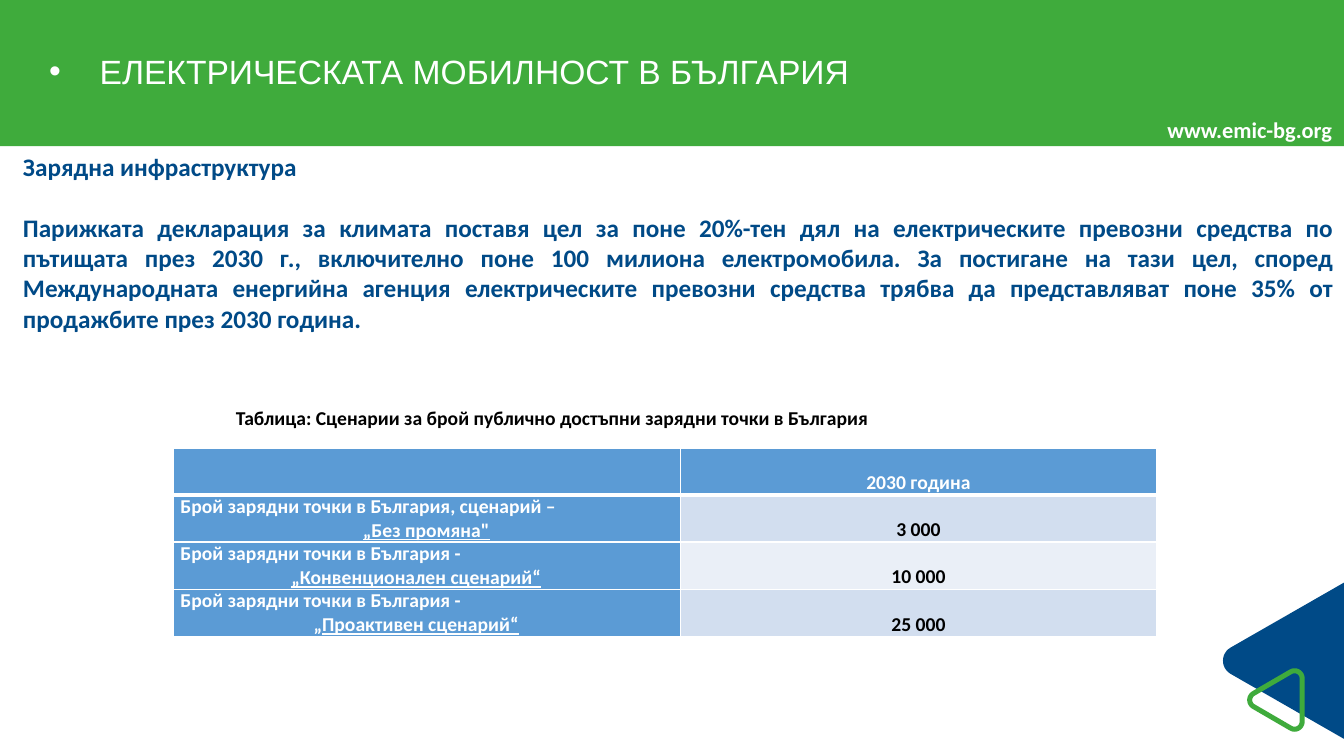
from math import cos, radians, sin

from lxml import etree
from pptx import Presentation
from pptx.dml.color import RGBColor
from pptx.enum.shapes import MSO_SHAPE
from pptx.enum.text import MSO_ANCHOR, PP_ALIGN
from pptx.oxml.ns import qn
from pptx.util import Pt

PX = 9144  # one hundredth of an inch
RECT = MSO_SHAPE.RECTANGLE
MIDDLE, BOTTOM = MSO_ANCHOR.MIDDLE, MSO_ANCHOR.BOTTOM
CENTER, JUSTIFY = PP_ALIGN.CENTER, PP_ALIGN.JUSTIFY
THEME = {
    "green": "3FAB3C", "navy": "004A87", "white": "FFFFFF", "black": "000000",
    "head": "5B9BD5", "bands": ("D2DEEF", "EAEFF7"),
    "title": 24, "body": 18, "link": 16, "small": 14,
}


def style(font, size, color, bold=True, name="Calibri"):
    font.name, font.size, font.bold = name, Pt(size), bold
    font.color.rgb = RGBColor.from_string(color)


def arc(x, y, r, start, end):
    """Points of an arc in EMU, every 10 degrees, clockwise."""
    return [((x + r * cos(radians(a))) * PX, (y + r * sin(radians(a))) * PX)
            for a in range(start, end + 1, 10)]


deck = Presentation()
deck.slide_width, deck.slide_height = 1333 * PX, 750 * PX
slide = deck.slides.add_slide(deck.slide_layouts[6])
shapes = slide.shapes

# Corner marks: a blue wedge, then a green ring with rounded corners
wedge = [(1333 * PX, 733 * PX)] + arc(1228, 655.5, 15, 120, 240) + [(1333 * PX, 578 * PX)]
ring = [arc(1247, 694.5, r, 120, 240) + arc(1284, 673, r, 240, 360) + arc(1284, 716, r, 0, 120)
        for r in (10, 5)]
marks = []
for loops, color in (([wedge], "navy"), (ring, "green")):
    pen = shapes.build_freeform(*loops[0][0], scale=1.0)
    pen.add_line_segments(loops[0][1:])
    for loop in loops[1:]:
        pen.move_to(*loop[0])
        pen.add_line_segments(loop[1:])
    marks.append((pen.convert_to_shape(), color))
marks.append((shapes.add_shape(RECT, 0, 0, 1333 * PX, 145 * PX), "green"))
for mark, color in marks:
    mark.shadow.inherit = False
    mark.fill.solid()
    mark.fill.fore_color.rgb = RGBColor.from_string(THEME[color])
    mark.line.fill.background()

# Text boxes
texts = [
    ((1148, 110, 186, 37), "www.emic-bg.org", "link", "white"),
    ((0, 0, 1333, 145), "ЕЛЕКТРИЧЕСКАТА МОБИЛНОСТ В БЪЛГАРИЯ", "title", "white"),
    ((13, 145, 1320, 192),
     "Зарядна инфраструктура\n"
     "Парижката декларация за климата поставя цел за поне 20%-тен дял на електрическите "
     "превозни средства по пътищата през 2030 г., включително поне 100 милиона електромобила. "
     "За постигане на тази цел, според Международната енергийна агенция електрическите "
     "превозни средства трябва да представляват поне 35% от продажбите през 2030 година.",
     "body", "navy"),
    ((224, 397, 785, 34),
     "Таблица: Сценарии за брой публично достъпни зарядни точки в България", "small", "black"),
]
frames = []
for place, text, size, color in texts:
    frame = shapes.add_textbox(*(n * PX for n in place)).text_frame
    frame.word_wrap = True
    frame.text = text
    frames.append(frame)
    if size == "title":
        props = frame.paragraphs[0]._p.get_or_add_pPr()
        props.set("marL", str(89 * PX))
        props.set("indent", str(-50 * PX))
        etree.SubElement(props, qn("a:buFont"), typeface="Arial")
        etree.SubElement(props, qn("a:buChar"), char="•")
    for para in frame.paragraphs:
        for run in para.runs:
            style(run.font, THEME[size], THEME[color], size != "title",
                  "Arial" if size == "title" else "Calibri")

link, title, body, note = frames
link.word_wrap = False
title.vertical_anchor = note.vertical_anchor = MIDDLE
title.paragraphs[0].line_spacing = 0.9
for para in body.paragraphs:
    para.alignment = JUSTIFY
body.paragraphs[1].space_before = Pt(22)

# Table: label, plain part, underlined part, tab stop, value
rows = [
    ("", "", "", 0, "2030 година"),
    ("Брой зарядни точки в България, сценарий –", "", "\t„Без промяна\"", 181, "3 000"),
    ("Брой зарядни точки в България -", "\t", "„Конвенционален сценарий“", 110, "10 000"),
    ("Брой зарядни точки в България -", "\t„", "Проактивен сценарий“", 132, "25 000"),
]
table = shapes.add_table(4, 2, 172 * PX, 445 * PX, 975 * PX, 184 * PX).table
for col, width in zip(table.columns, (503, 472)):
    col.width = width * PX
for i, (label, plain, under, stop, value) in enumerate(rows):
    table.rows[i].height = 46 * PX
    name, count = table.cell(i, 0), table.cell(i, 1)
    name.text, count.text = label, value
    count.text_frame.paragraphs[0].alignment = CENTER
    if stop:
        para = name.text_frame.add_paragraph()
        tabs = etree.SubElement(para._p.get_or_add_pPr(), qn("a:tabLst"))
        etree.SubElement(tabs, qn("a:tab"), pos=str(stop * PX), algn="l")
        for part in filter(None, (plain, under)):
            run = para.add_run()
            run.text = part
            run.font.underline = part == under
    for cell in (name, count):
        lead = i == 0 or cell is name
        cell.fill.solid()
        cell.fill.fore_color.rgb = RGBColor.from_string(
            THEME["head"] if lead else THEME["bands"][(i - 1) % 2])
        cell.vertical_anchor = BOTTOM
        cell.margin_left = cell.margin_right = 7 * PX
        cell.margin_top = cell.margin_bottom = 0
        for para in cell.text_frame.paragraphs:
            for font in [run.font for run in para.runs] or [para.font]:
                style(font, THEME["small"], THEME["white" if lead else "black"])
        props = cell._tc.get_or_add_tcPr()
        for n, side in enumerate(("lnL", "lnR", "lnT", "lnB")):
            thick = (i == 0 and side == "lnB") or (i == 1 and side == "lnT")
            edge = etree.Element(qn("a:" + side), w=str(Pt(3 if thick else 1)))
            paint = etree.SubElement(edge, qn("a:solidFill"))
            etree.SubElement(paint, qn("a:srgbClr"), val=THEME["white"])
            props.insert(n, edge)

deck.save("out.pptx")
